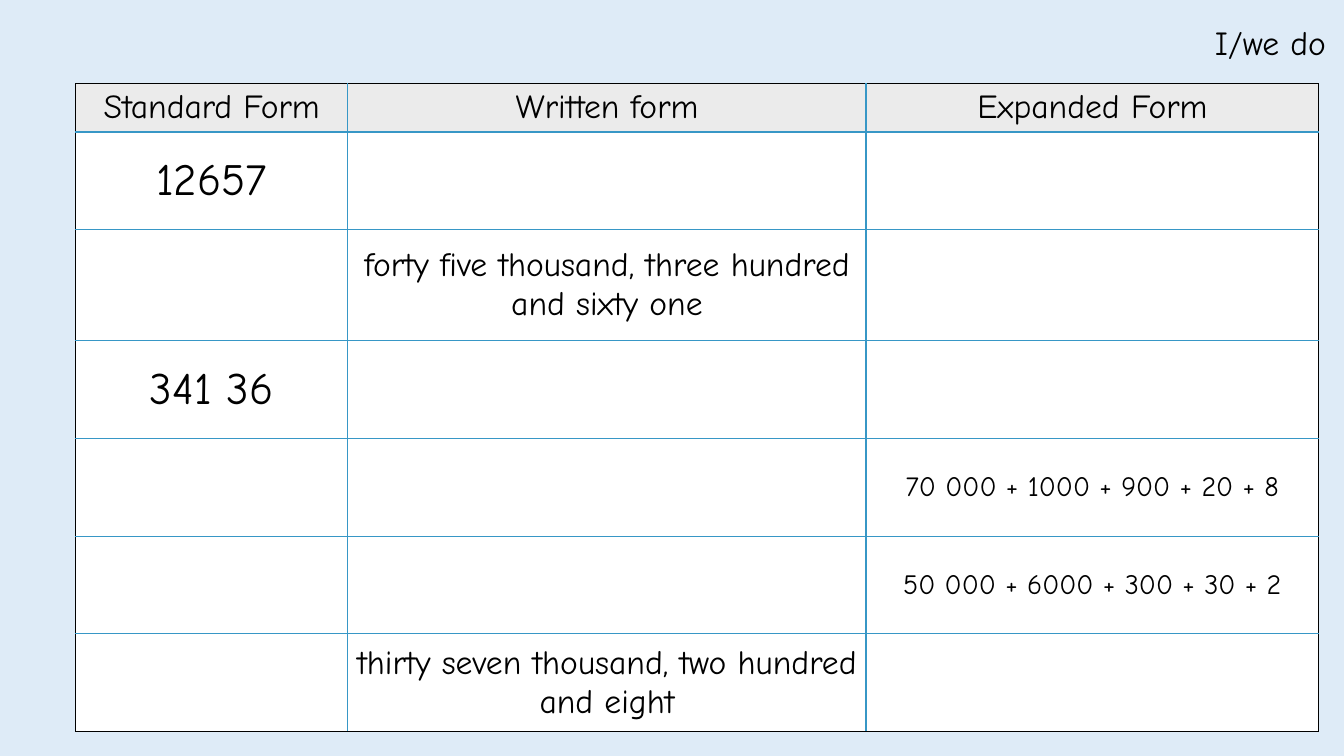
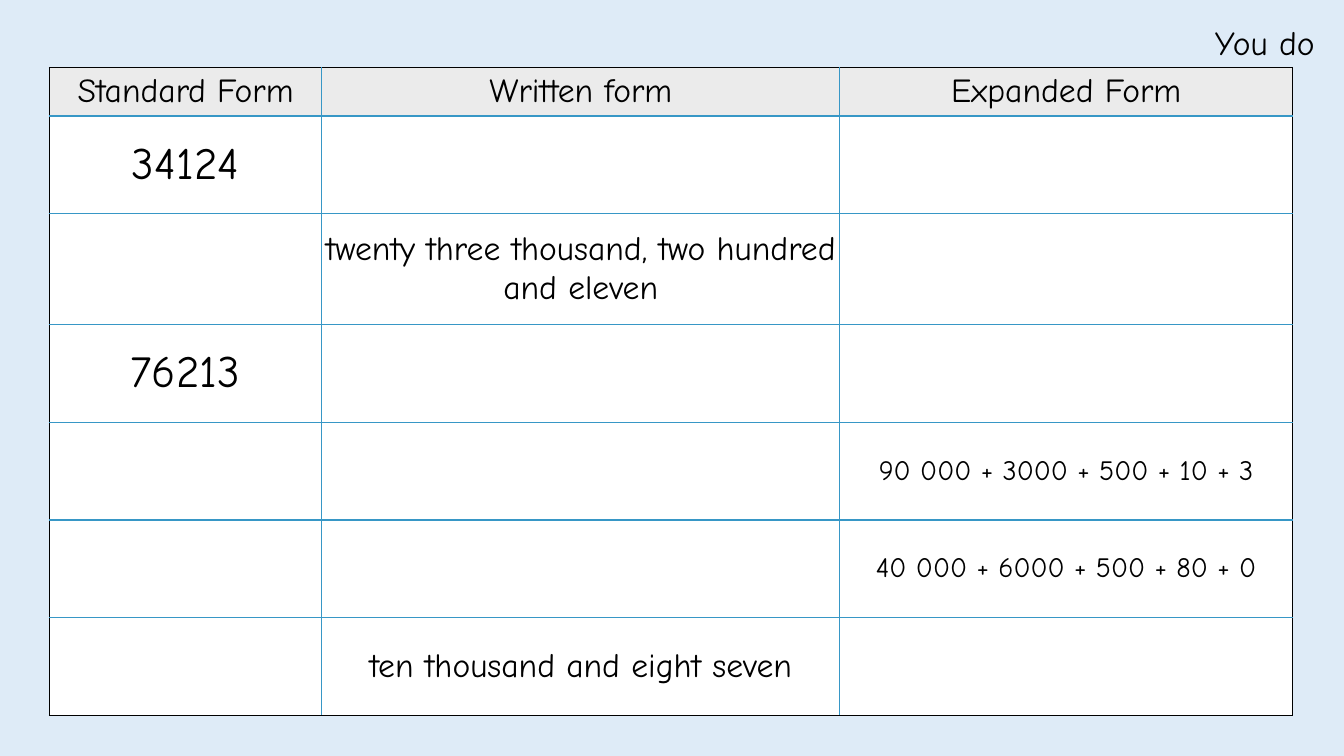
from dataclasses import dataclass

from lxml import etree
from pptx import Presentation
from pptx import util as u
from pptx.dml.color import RGBColor
from pptx.enum import text
from pptx.oxml import ns

COLOURS = {
    "background": "DEEBF7",
    "header": "EBEBEB",
    "body": "FFFFFF",
    "text": "000000",
    "frame": "000000",
    "grid": "3797C6",
}
FONT = "Comic Neue"
INSET = u.Inches(0.04)
CELL_SIDE_INSET = u.Inches(0.03)
BORDER_WIDTH = u.Pt(1)

TITLE_LEFT, TITLE_TOP, TITLE_HEIGHT = 12.01, 0.18, 0.48
TITLE_SIZE = HEADER_SIZE = 24
COLUMN_WIDTHS = (2.7, 5.14, 4.49)
COLUMN_SIZES = (32, 24, 20)
ROW_HEIGHTS = (0.48, 0.97, 1.1, 0.97, 0.97, 0.97, 0.97)
HEADINGS = ("Standard Form", "Written form", "Expanded Form")
# The column that holds the given number in each body row
GIVEN_COLUMNS = (0, 1, 0, 2, 2, 1)


@dataclass(frozen=True)
class Exercise:
    title: str
    title_width: float
    left: float
    top: float
    given: tuple[str, ...]


EXERCISES = (
    Exercise("I/we do", 1.32, 0.75, 0.83, (
        "12657",
        "forty five thousand, three hundred and sixty one",
        "341 36",
        "70 000 + 1000 + 900 + 20 + 8",
        "50 000 + 6000 + 300 + 30 + 2",
        "thirty seven thousand, two hundred and eight",
    )),
    Exercise("You do", 1.12, 0.49, 0.67, (
        "34124",
        "twenty three thousand, two hundred and eleven",
        "76213",
        "90 000 + 3000 + 500 + 10 + 3",
        "40 000 + 6000 + 500 + 80 + 0",
        "ten thousand and eight seven",
    )),
)


def colour(name: str) -> RGBColor:
    return RGBColor.from_string(COLOURS[name])


def write(text_frame, wording: str, size: int, alignment) -> None:
    text_frame.text = wording
    paragraph = text_frame.paragraphs[0]
    paragraph.alignment = alignment
    for run in paragraph.runs:
        run.font.name = FONT
        run.font.size = u.Pt(size)
        run.font.color.rgb = colour("text")


def set_borders(cell, row: int, column: int) -> None:
    """Frame the table's outer edges and rule its inner ones."""
    outer_edges = {
        "a:lnL": column == 0,
        "a:lnR": column == len(COLUMN_WIDTHS) - 1,
        "a:lnT": row == 0,
        "a:lnB": row == len(ROW_HEIGHTS) - 1,
    }
    properties = cell._tc.get_or_add_tcPr()
    for position, (tag, outer) in enumerate(outer_edges.items()):
        line = etree.Element(ns.qn(tag), w=str(int(BORDER_WIDTH)))
        fill = etree.SubElement(line, ns.qn("a:solidFill"))
        etree.SubElement(fill, ns.qn("a:srgbClr"),
                         val=COLOURS["frame" if outer else "grid"])
        properties.insert(position, line)


def add_title(slide, exercise: Exercise) -> None:
    title = slide.shapes.title
    title.left, title.top = u.Inches(TITLE_LEFT), u.Inches(TITLE_TOP)
    title.width, title.height = u.Inches(exercise.title_width), u.Inches(TITLE_HEIGHT)
    frame = title.text_frame
    frame.margin_left = frame.margin_right = INSET
    frame.margin_top = frame.margin_bottom = INSET
    frame.vertical_anchor = text.MSO_ANCHOR.MIDDLE
    frame.word_wrap = False
    frame.auto_size = text.MSO_AUTO_SIZE.NONE
    write(frame, exercise.title, TITLE_SIZE, text.PP_ALIGN.LEFT)


def add_number_table(slide, exercise: Exercise) -> None:
    table = slide.shapes.add_table(
        len(ROW_HEIGHTS), len(COLUMN_WIDTHS),
        u.Inches(exercise.left), u.Inches(exercise.top),
        u.Inches(sum(COLUMN_WIDTHS)), u.Inches(sum(ROW_HEIGHTS))).table
    table.first_row = table.horz_banding = False
    for column, width in zip(table.columns, COLUMN_WIDTHS):
        column.width = u.Inches(width)
    for row, height in zip(table.rows, ROW_HEIGHTS):
        row.height = u.Inches(height)

    # Fills, borders and insets
    for index, cell in enumerate(table.iter_cells()):
        row, column = divmod(index, len(COLUMN_WIDTHS))
        cell.fill.solid()
        cell.fill.fore_color.rgb = colour("body" if row else "header")
        cell.vertical_anchor = text.MSO_ANCHOR.MIDDLE
        cell.margin_left = cell.margin_right = CELL_SIDE_INSET
        cell.margin_top = cell.margin_bottom = INSET
        set_borders(cell, row, column)

    # Headings and given numbers
    for column, heading in enumerate(HEADINGS):
        write(table.cell(0, column).text_frame, heading, HEADER_SIZE,
              text.PP_ALIGN.CENTER)
    for row, (column, number) in enumerate(zip(GIVEN_COLUMNS, exercise.given), 1):
        write(table.cell(row, column).text_frame, number, COLUMN_SIZES[column],
              text.PP_ALIGN.CENTER)


def main() -> None:
    presentation = Presentation()
    presentation.slide_width = u.Inches(13.33)
    presentation.slide_height = u.Inches(7.5)
    background = presentation.slide_master.background.fill
    background.solid()
    background.fore_color.rgb = colour("background")

    title_only = presentation.slide_layouts.get_by_name("Title Only")
    for exercise in EXERCISES:
        slide = presentation.slides.add_slide(title_only)
        add_title(slide, exercise)
        add_number_table(slide, exercise)
    presentation.save("out.pptx")


if __name__ == "__main__":
    main()
